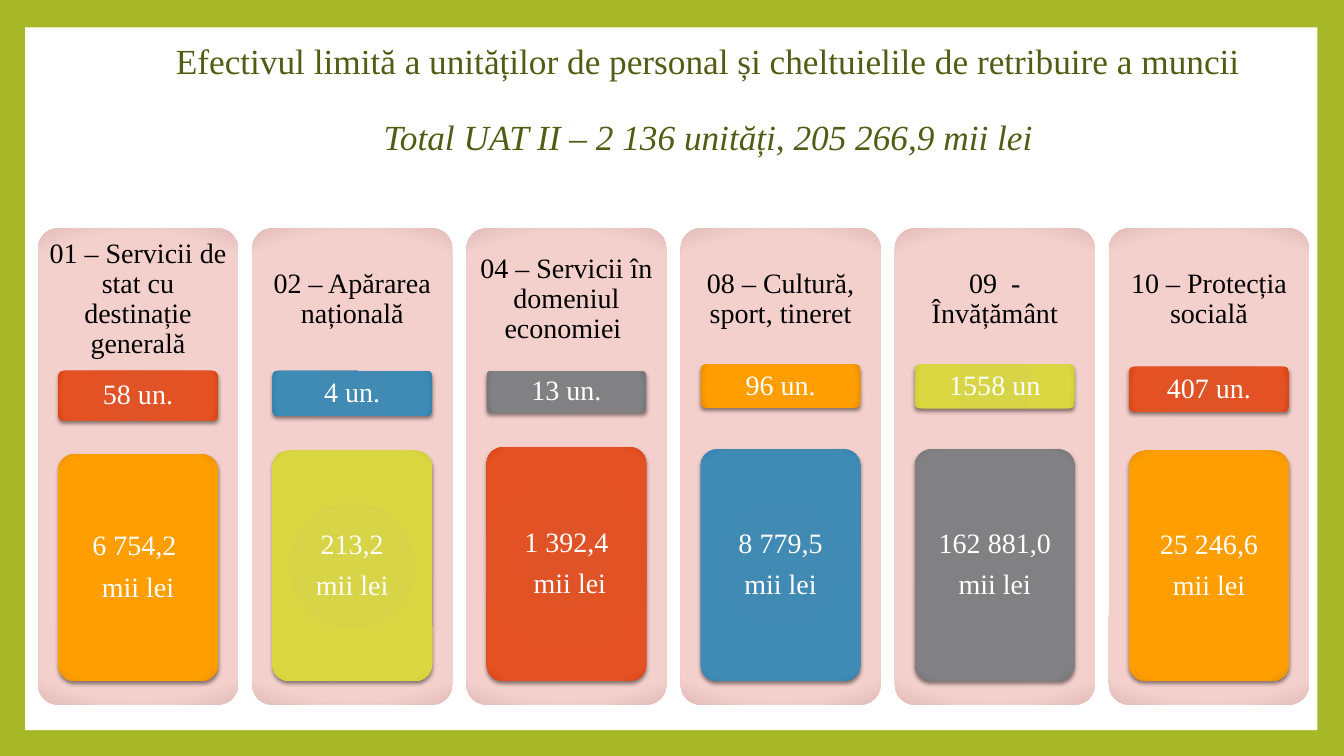
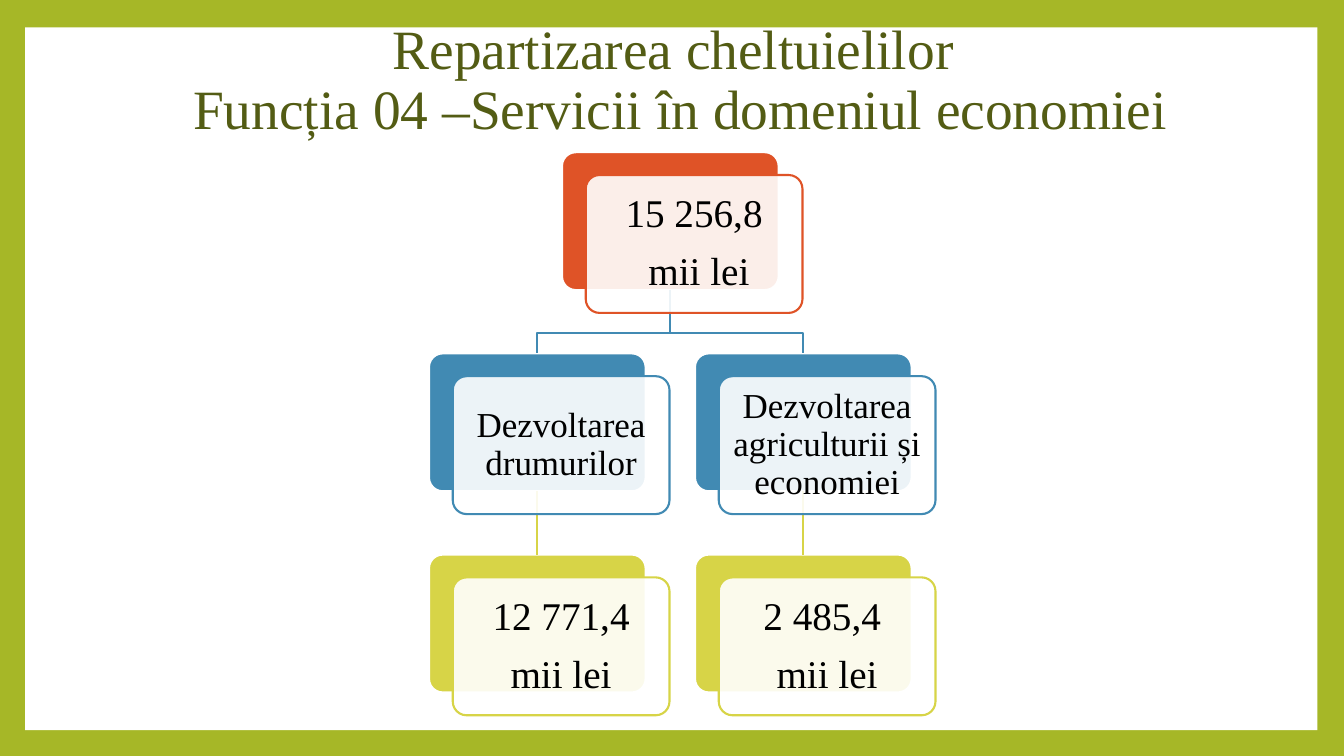
import lxml.etree
import pptx
import pptx.dml.color
import pptx.enum.shapes
import pptx.enum.text
import pptx.oxml
import pptx.oxml.ns
import pptx.util

Pt = pptx.util.Pt
qn = pptx.oxml.ns.qn
SHAPE = pptx.enum.shapes.MSO_SHAPE
ANCHOR = pptx.enum.text.MSO_ANCHOR


class Theme:
    font = "Times New Roman"
    frame, paper, ink, heading = "A6B727", "FFFFFF", "000000", "535C14"
    red, blue, lime = "DF5327", "418AB3", "D7D447"
    # Radial gradients: centre, 90 %, edge
    pink_glow = ("F3D1CD", "F4D0CC", "E0BBB7")
    red_glow = (red, "E45122", "DB4313")
    blue_glow = (blue, "3E8BB6", "3180AD")
    lime_glow = (lime, "DBD743", "D0CD33")
    gray_glow = ("818183", "818183", "757577")
    orange_glow = ("FE9E00", "FE9E00", "E78F00")
    small_title, big_title = 25.2, 39.6
    column_text, amount_text, topic_text = 20, 28, 25
    line_width = 1.5


STAFF_TITLE = ("Efectivul limită a unităților de personal și cheltuielile de retribuire a muncii",
               "Total UAT II – 2 136 unități, 205 266,9 mii lei")
# function, units, amount, units colour, amount colour, units (top, height), amount top
FUNCTIONS = [
    ("01 – Servicii de stat cu destinație generală", "58 un.", ("6 754,2 ", "mii lei"),
     Theme.red_glow, Theme.orange_glow, (265, 35.5), 324.5),
    ("02 – Apărarea națională", "4 un.", ("213,2", " mii lei "),
     Theme.blue_glow, Theme.lime_glow, (265, 32), 322),
    ("04 – Servicii în domeniul economiei ", "13 un.", ("1 392,4", " mii lei"),
     Theme.gray_glow, Theme.red_glow, (265, 29.5), 319.5),
    ("08 – Cultură, sport, tineret", "96 un.", ("8 779,5", "mii lei"),
     Theme.orange_glow, Theme.blue_glow, (260.5, 30.5), 321),
    ("09  - Învățământ", "1558 un", ("162 881,0", "mii lei"),
     Theme.lime_glow, Theme.gray_glow, (260.5, 31), 321),
    ("10 – Protecția socială", "407 un.", ("25 246,6", "mii lei"),
     Theme.red_glow, Theme.orange_glow, (262, 32), 322),
]

SPENDING_TITLE = ("Repartizarea cheltuielilor ", "Funcția 04 –Servicii în domeniul economiei")
# key: lines, colour, size, column, level, parent
CARDS = {
    "total": (("15 256,8", " mii lei"), Theme.red, Theme.amount_text, 0.5, 0, None),
    "roads": (("Dezvoltarea drumurilor",), Theme.blue, Theme.topic_text, 0, 1, "total"),
    "farming": (("Dezvoltarea agriculturii și economiei",), Theme.blue, Theme.topic_text,
                1, 1, "total"),
    "roads sum": (("12 771,4", "mii lei"), Theme.lime, Theme.amount_text, 0, 2, "roads"),
    "farming sum": (("2 485,4 ", "mii lei"), Theme.lime, Theme.amount_text, 1, 2, "farming"),
}


def rgb(color):
    return pptx.dml.color.RGBColor.from_string(color)


def write(frame, lines, size, color, inset, gap=0.4):
    """Fill a frame with centred paragraphs; gap is a share of the type size."""
    frame.word_wrap = True
    frame.auto_size = pptx.enum.text.MSO_AUTO_SIZE.NONE
    frame.vertical_anchor = ANCHOR.MIDDLE
    frame.margin_left = frame.margin_right = Pt(inset)
    frame.margin_top = frame.margin_bottom = Pt(inset)
    frame.text = "\n".join(lines)
    for paragraph in frame.paragraphs:
        paragraph.alignment = pptx.enum.text.PP_ALIGN.CENTER
        paragraph.line_spacing = 0.9
        paragraph.space_before = Pt(0)
        paragraph.space_after = Pt(size * gap)
        paragraph.font.name = Theme.font
        paragraph.font.size = Pt(size)
        paragraph.font.color.rgb = rgb(color)


def add_block(slide, box, fill, line=None, kind=SHAPE.ROUNDED_RECTANGLE):
    block = slide.shapes.add_shape(kind, *map(Pt, box))
    if kind == SHAPE.ROUNDED_RECTANGLE:
        block.adjustments[0] = 0.1
    block.shadow.inherit = False
    block.fill.solid()
    block.fill.fore_color.rgb = rgb(fill)
    if line:
        block.line.color.rgb = rgb(line)
        block.line.width = Pt(Theme.line_width)
    else:
        block.line.fill.background()
    return block


def add_glow_block(slide, box, glow, shadow=True):
    block = add_block(slide, box, glow[0])
    properties = block.element.spPr
    stops = "".join(f'<a:gs pos="{position}"><a:srgbClr val="{color}"/></a:gs>'
                    for position, color in zip((0, 90000, 100000), glow))
    gradient = pptx.oxml.parse_xml(
        f'<a:gradFill {pptx.oxml.ns.nsdecls("a")} rotWithShape="1"><a:gsLst>{stops}</a:gsLst>'
        '<a:path path="circle"><a:fillToRect l="100000" t="100000" r="100000" b="100000"/>'
        '</a:path></a:gradFill>')
    properties.replace(properties.find(qn("a:solidFill")), gradient)
    if shadow:
        outer = lxml.etree.SubElement(properties.find(qn("a:effectLst")), qn("a:outerShdw"),
                                      blurRad=str(Pt(3)), dist=str(Pt(2)), dir="5400000",
                                      algn="ctr", rotWithShape="0")
        tint = lxml.etree.SubElement(outer, qn("a:srgbClr"), val=Theme.ink)
        lxml.etree.SubElement(tint, qn("a:alpha"), val="45000")
    return block


def set_up_master(deck, slide):
    """Give every slide the green frame around a white sheet."""
    master = deck.slide_master
    master.background.fill.solid()
    master.background.fill.fore_color.rgb = rgb(Theme.frame)
    sheet = add_block(slide, (18, 19.5, 923, 502), Theme.paper, kind=SHAPE.RECTANGLE).element
    sheet.nvSpPr.cNvPr.set("id", "100")
    master.shapes.element.insert(2, sheet)


def add_title(slide, lines, box, size, gap=0):
    title = slide.shapes.title
    title.left, title.top, title.width, title.height = map(Pt, box)
    write(title.text_frame, lines, size, Theme.heading, 3.6, gap)
    return title.text_frame


def build_staff(slide):
    heading = add_title(slide, STAFF_TITLE, (106, 27.5, 800, 88.5), Theme.small_title, 1.09)
    heading.vertical_anchor = ANCHOR.TOP
    heading.paragraphs[1].font.italic = True

    left, pitch, width, top, height = 27.2, 153, 142.8, 163, 340.5
    inner, amount_bottom = 114, 486.4
    for index, (name, units, amount, units_glow, amount_glow,
                (units_top, units_height), amount_top) in enumerate(FUNCTIONS):
        x = left + index * pitch
        inner_x = x + (width - inner) / 2
        add_glow_block(slide, (x, top, width, height), Theme.pink_glow, shadow=False)
        label = slide.shapes.add_textbox(*map(Pt, (x, top, width, 102)))
        write(label.text_frame, [name], Theme.column_text, Theme.ink, 5.6)
        for lines, glow, y, tall in (
                ([units], units_glow, units_top, units_height),
                (amount, amount_glow, amount_top, amount_bottom - amount_top)):
            block = add_glow_block(slide, (inner_x, y, inner, tall), glow)
            write(block.text_frame, lines, Theme.column_text, Theme.paper, 3)


def style_link(link, color):
    link.line.color.rgb = rgb(color)
    link.line.width = Pt(Theme.line_width)


def add_link(slide, parent, child, color):
    """Join two cards: straight when aligned, else with a bend at 68 % of the drop."""
    x1, y1 = parent.left + parent.width // 2, parent.top + parent.height
    x2, y2 = child.left + child.width // 2, child.top
    if x1 == x2:
        link = slide.shapes.add_connector(
            pptx.enum.shapes.MSO_CONNECTOR.STRAIGHT, x1, y1, x2, y2)
        link.begin_connect(parent, 2)
        link.end_connect(child, 0)
        lxml.etree.SubElement(link.element.spPr, qn("a:effectLst"))
        style_link(link, color)
        return
    bend = y1 + round((y2 - y1) * 0.68)
    outline = slide.shapes.build_freeform(x1, y1)
    outline.add_line_segments([(x1, bend), (x2, bend), (x2, y2)], close=False)
    link = outline.convert_to_shape()
    link.shadow.inherit = False
    link.fill.background()
    style_link(link, color)


def build_spending(slide):
    add_title(slide, SPENDING_TITLE, (108, 8.6, 756, 99.4), Theme.big_title)
    left, top, width, height = 306.4, 108.7, 154.8, 98.5
    column_pitch, level_pitch, shift_x, shift_y = 190, 143.7, 17, 16.3

    def card_box(column, level, dx=0, dy=0):
        return (left + column * column_pitch + dx, top + level * level_pitch + dy, width, height)

    backs = {key: add_block(slide, card_box(column, level), color, Theme.paper)
             for key, (_, color, _, column, level, _) in CARDS.items()}
    for key, (_, color, _, _, _, parent) in CARDS.items():
        if parent:
            add_link(slide, backs[parent], backs[key], color)
    for lines, color, size, column, level, _ in CARDS.values():
        front = add_block(slide, card_box(column, level, shift_x, shift_y), Theme.paper, color)
        tint = front.element.spPr.find(qn("a:solidFill")).find(qn("a:srgbClr"))
        lxml.etree.SubElement(tint, qn("a:alpha"), val="90000")
        write(front.text_frame, lines, size, Theme.ink, 6.5)


def main():
    deck = pptx.Presentation()
    deck.slide_width, deck.slide_height = Pt(960), Pt(540)
    title_only = deck.slide_layouts[5]
    staff, spending = (deck.slides.add_slide(title_only) for _ in range(2))
    set_up_master(deck, staff)
    build_staff(staff)
    build_spending(spending)
    deck.save("out.pptx")


if __name__ == "__main__":
    main()
